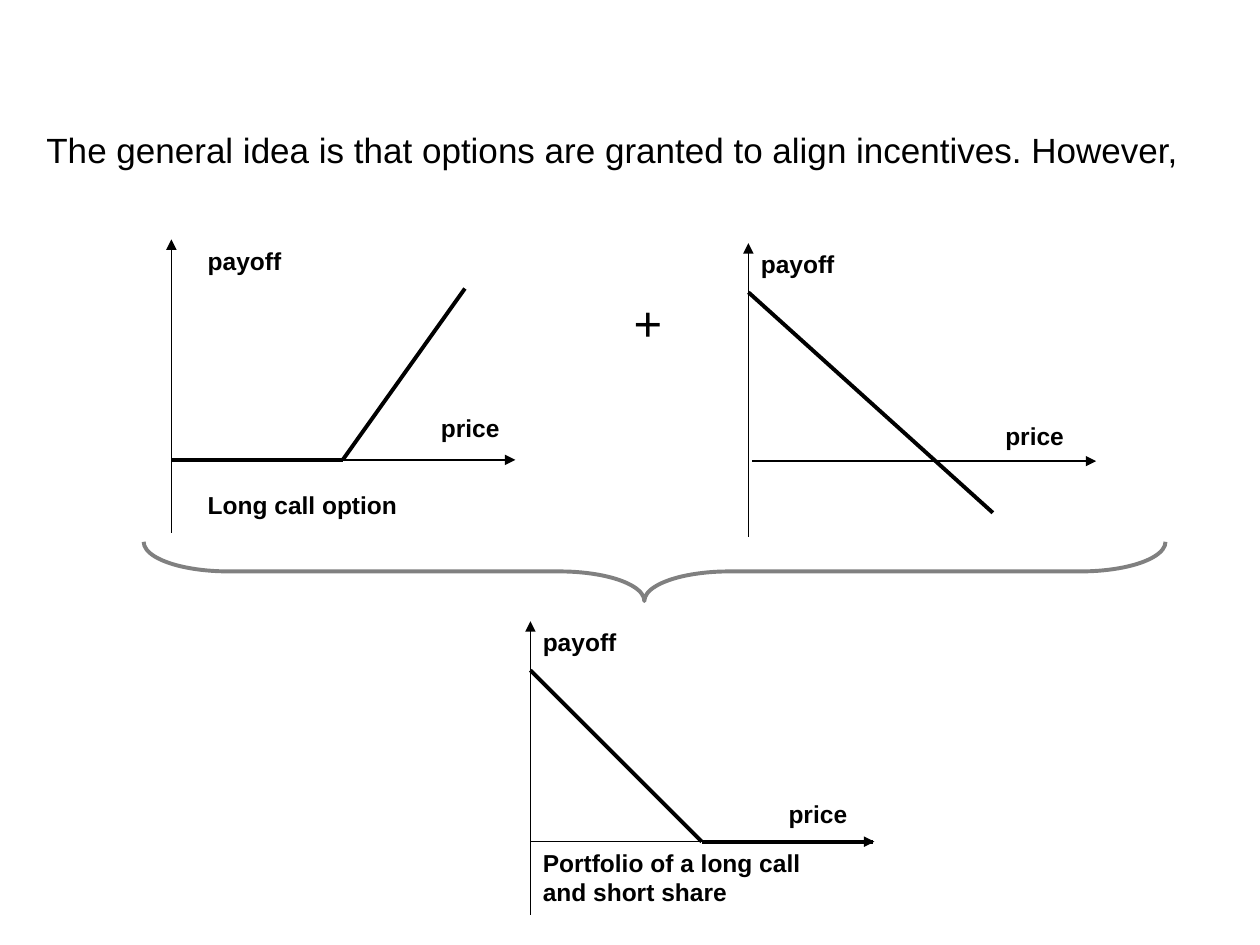
from lxml.etree import SubElement
from pptx import Presentation
from pptx.dml.color import RGBColor
from pptx.enum.shapes import MSO_CONNECTOR, MSO_SHAPE
from pptx.oxml.ns import qn
from pptx.util import Pt

BLACK = RGBColor(0, 0, 0)
WHITE = RGBColor(255, 255, 255)
GRAY = RGBColor(128, 128, 128)
SCALE = 9144  # EMU per px, 100 px to the inch


def px(n):
    return n * SCALE


class Deck:
    font = "Arial"
    thin = Pt(0.75)
    thick = Pt(2.25)

    def __init__(self, wide, high):
        self.prs = Presentation()
        self.prs.slide_width, self.prs.slide_height = px(wide), px(high)
        self.slide = self.prs.slides.add_slide(self.prs.slide_layouts[6])

    def run(self, para, text, size, bold=False):
        run = para.add_run()
        run.text = text
        font = run.font
        font.name, font.size, font.bold = self.font, Pt(size), bold
        font.color.rgb = BLACK

    def text(self, box, text, size=14, bold=True, fill=None):
        shape = self.slide.shapes.add_textbox(*map(px, box))
        shape.text_frame.word_wrap = True
        if fill is not None:
            shape.fill.solid()
            shape.fill.fore_color.rgb = fill
        self.run(shape.text_frame.paragraphs[0], text, size, bold)
        return shape.text_frame

    def line(self, start, end, width, arrow=False):
        line = self.slide.shapes.add_connector(
            MSO_CONNECTOR.STRAIGHT, *map(px, start + end))
        line.line.color.rgb = BLACK
        line.line.width = width
        props = line._element.spPr
        if arrow:
            SubElement(props.find(qn("a:ln")), qn("a:tailEnd"), type="triangle")
        SubElement(props, qn("a:effectLst"))

    def plot(self, left, top, zero, curve, price, start=0, shift=0):
        """Draw both axes, the payoff curve and the axis labels."""
        self.line((left, top + 233), (left, top), self.thin, True)
        self.line((left + start, zero), (left + start + 273, zero), self.thin, True)
        for a, b in zip(curve, curve[1:]):
            self.line(a, b, self.thick)
        self.text((*price, 88, 39), "price")
        self.text((left + shift, top, 97, 39), "payoff")

    def brace(self, box, bend, point):
        shape = self.slide.shapes.add_shape(MSO_SHAPE.LEFT_BRACE, *map(px, box))
        shape.rotation = 270
        shape.adjustments[0], shape.adjustments[1] = bend, point
        shape.shadow.inherit = False
        shape.fill.background()
        shape.line.color.rgb = GRAY
        shape.line.width = self.thick


deck = Deck(1000, 750)

# Opening sentence and plus sign
body = deck.text(
    (27, 97, 973, 638),
    "The general idea is that options are granted to align incentives. However,",
    20, False)
plus = body.add_paragraph()
plus.space_before = Pt(70)
plus._p.get_or_add_pPr().set("marL", str(px(466)))
deck.run(plus, "+", 28)

# Long call
deck.text((155, 384, 214, 117), "Long call option", fill=WHITE)
deck.plot(136, 190, 365, [(136, 365), (272, 365), (369, 229)],
          (340, 323), shift=19)

# Short share
deck.plot(594, 193, 366, [(594, 232), (788, 407)], (788, 329), start=3)

# Portfolio of both
deck.plot(421, 493, 668, [(421, 532), (557, 668), (693, 668)], (616, 629))
deck.text((421, 668, 253, 136), "Portfolio of a long call and short share")

# Brace joining the two upper plots
deck.brace((496, 48, 47, 811), 1.43, 0.49)

deck.prs.save("out.pptx")
